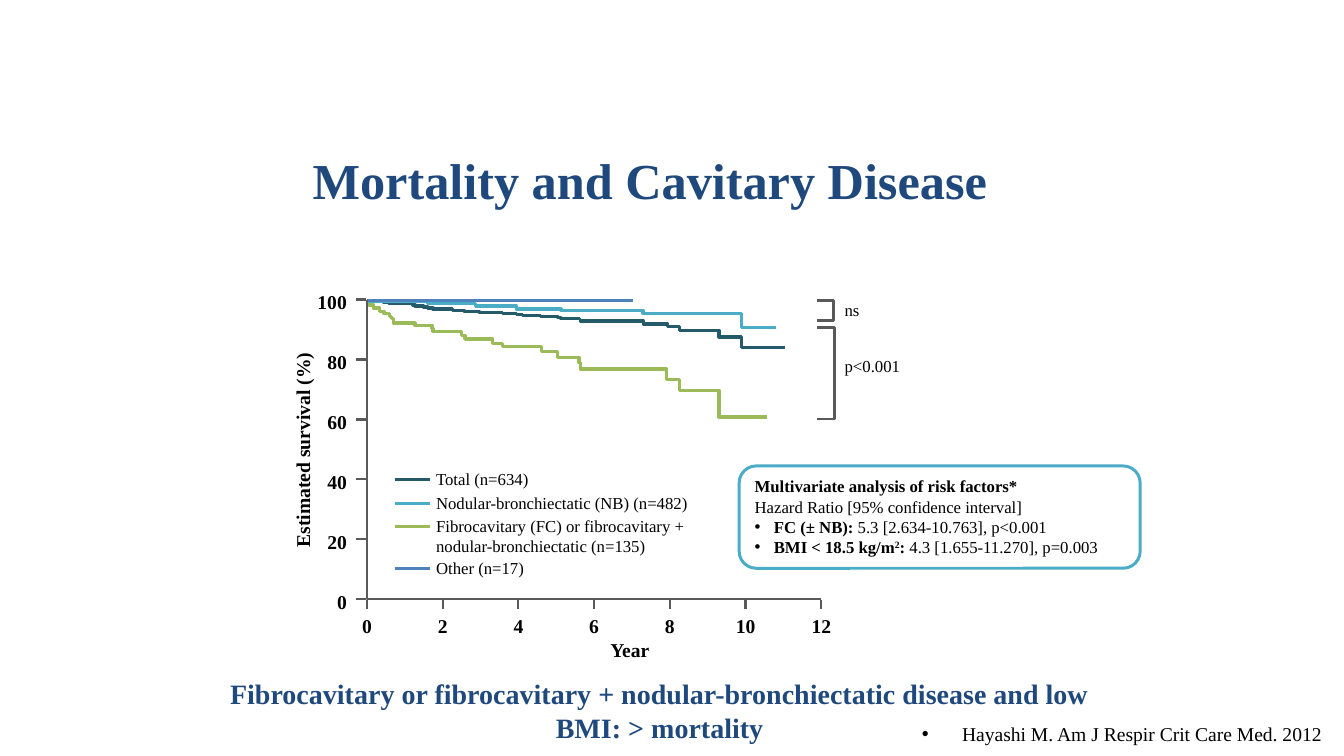
from dataclasses import dataclass

from lxml.etree import SubElement
from pptx import Presentation
from pptx.dml.color import RGBColor
from pptx.enum.shapes import MSO_CONNECTOR, MSO_SHAPE
from pptx.enum.text import MSO_ANCHOR as Anchor, MSO_AUTO_SIZE, PP_ALIGN as Align
from pptx.oxml.ns import qn
from pptx.util import Inches, Pt

FONT = "Times New Roman"
BLACK, WHITE, NAVY = "000000", "FFFFFF", "1F497D"
TEAL, SKY, GREEN, BLUE = "245A69", "4BACC6", "9BBB59", "4F81BD"
AXIS, BRACKET = "5A5A5A", "595959"
X0, Y0, X_STEP, Y_STEP = 3.44, 5.62, 0.71, 0.562

Point = tuple[float, float]


@dataclass
class Curve:
    label: str
    color: str
    legend_top: float
    legend_width: float
    start: Point
    drops: list[Point]  # at x, fall to y
    end_x: float


@dataclass
class Comparison:
    label: str
    label_top: float
    left: float
    top: float
    width: float
    height: float


# Listed from back to front
CURVES = [
    Curve("Fibrocavitary (FC) or fibrocavitary + nodular-bronchiectatic (n=135)",
          GREEN, 4.79, 2.99, (3.46, 2.83),
          [(3.46, 2.86), (3.5, 2.89), (3.56, 2.92), (3.6, 2.94), (3.65, 2.97),
           (3.67, 2.99), (3.69, 3.03), (3.89, 3.05), (4.05, 3.08), (4.06, 3.11),
           (4.33, 3.15), (4.36, 3.18), (4.62, 3.22), (4.71, 3.25), (5.08, 3.3),
           (5.23, 3.35), (5.43, 3.4), (5.44, 3.46), (6.25, 3.56), (6.37, 3.66),
           (6.74, 3.91)], 7.19),
    Curve("Total (n=634)", TEAL, 4.35, 1.17, (3.44, 2.83),
          [(3.6, 2.84), (3.64, 2.85), (3.87, 2.86), (3.89, 2.87), (3.97, 2.88),
           (4.01, 2.89), (4.06, 2.9), (4.24, 2.91), (4.35, 2.92), (4.49, 2.93),
           (4.71, 2.94), (4.84, 2.95), (4.9, 2.96), (5.07, 2.97), (5.23, 2.98),
           (5.26, 2.99), (5.43, 3), (5.44, 3.01), (6.03, 3.04), (6.26, 3.06),
           (6.37, 3.1), (6.74, 3.16), (6.95, 3.26)], 7.36),
    Curve("Nodular-bronchiectatic (NB) (n=482)", SKY, 4.57, 2.83, (3.45, 2.83),
          [(4.01, 2.85), (4.46, 2.87), (4.84, 2.9), (5.26, 2.91), (6.03, 2.94),
           (6.95, 3.07)], 7.28),
    Curve("Other (n=17)", BLUE, 5.18, 1.2, (3.44, 2.82), [], 5.93),
]

COMPARISONS = [
    Comparison("ns", 2.76, 7.66, 2.82, 0.15, 0.19),
    Comparison("p<0.001", 3.29, 7.66, 3.07, 0.16, 0.86),
]

prs = Presentation()
prs.slide_width, prs.slide_height = Inches(12.6), Inches(7.09)
s = prs.slides.add_slide(prs.slide_layouts[1])


def rgb(color: str) -> RGBColor:
    return RGBColor.from_string(color)


def style(font, size: float, color: str = BLACK, bold: bool = False) -> None:
    font.name, font.size, font.bold = FONT, Pt(size), bold
    font.color.rgb = rgb(color)


def place(sp, left: float, top: float, width: float, height: float) -> None:
    sp.left, sp.top = Inches(left), Inches(top)
    sp.width, sp.height = Inches(width), Inches(height)


def write(sp, text: str, size: float, color: str = BLACK, bold: bool = False,
          align: Align = Align.LEFT, anchor: Anchor = Anchor.TOP) -> None:
    tf = sp.text_frame
    tf.text = text
    tf.word_wrap, tf.auto_size = True, MSO_AUTO_SIZE.NONE
    tf.vertical_anchor = anchor
    p = tf.paragraphs[0]
    p.alignment = align
    for r in p.runs:
        style(r.font, size, color, bold)


def add_text(text: str, left: float, top: float, width: float, height: float,
             size: float, bold: bool = False, align: Align = Align.LEFT):
    sp = s.shapes.add_textbox(*map(Inches, (left, top, width, height)))
    write(sp, text, size, bold=bold, align=align)
    return sp


def add_outline(kind: MSO_SHAPE, left: float, top: float, width: float,
                height: float, color: str | None = None):
    sp = s.shapes.add_shape(kind, *map(Inches, (left, top, width, height)))
    sp.shadow.inherit = False
    sp.fill.background()
    if color:
        sp.line.color.rgb, sp.line.width = rgb(color), Pt(2)
    else:
        sp.line.fill.background()
    return sp


def add_line(start: Point, end: Point, color: str, width: float) -> None:
    c = s.shapes.add_connector(MSO_CONNECTOR.STRAIGHT, *map(Inches, start + end))
    c.line.color.rgb, c.line.width = rgb(color), Pt(width)
    SubElement(c._element.spPr, qn("a:effectLst"))


def add_polyline(points: list[Point], color: str, width: float) -> None:
    pts = [(Inches(x), Inches(y)) for x, y in points]
    builder = s.shapes.build_freeform(*pts[0])
    builder.add_line_segments(pts[1:], close=False)
    sp = builder.convert_to_shape()
    sp.shadow.inherit = False
    sp.fill.background()
    sp.line.color.rgb, sp.line.width = rgb(color), Pt(width)


def add_curve(curve: Curve) -> None:
    points = [curve.start]
    for x, y in curve.drops:
        points += [(x, points[-1][1]), (x, y)]
    points.append((curve.end_x, points[-1][1]))
    if curve.drops:
        add_polyline(points, curve.color, 2.25)
    else:
        add_line(points[0], points[-1], curve.color, 2.25)


# Title and citation
title, citation = s.placeholders
place(title, 1.68, 1.67, 8.83, 0.35)
write(title, "Mortality and Cavitary Disease", 34, NAVY, True, Align.CENTER, Anchor.BOTTOM)
place(citation, 3.78, 6.62, 8.71, 0.42)
pPr = citation.text_frame.paragraphs[0]._p.get_or_add_pPr()
pPr.set("marL", "0")
pPr.set("indent", "0")
SubElement(pPr, qn("a:buNone"))
write(citation, "Hayashi M. Am J Respir Crit Care Med. 2012", 13.2,
      align=Align.RIGHT, anchor=Anchor.BOTTOM)
citation.text_frame.paragraphs[0].space_before = Pt(0)

# Conclusion
conclusion = add_outline(MSO_SHAPE.ROUNDED_RECTANGLE, 1.68, 6.25, 9.01, 0.82)
write(conclusion, "Fibrocavitary or fibrocavitary + nodular-bronchiectatic disease and low "
      "BMI: > mortality", 18.9, NAVY, True, Align.CENTER, Anchor.MIDDLE)

# Risk factors
risks = add_outline(MSO_SHAPE.ROUNDED_RECTANGLE, 6.93, 4.37, 3.76, 0.96, SKY)
risks.fill.solid()
risks.fill.fore_color.rgb = rgb(WHITE)
write(risks, "Multivariate analysis of risk factors*\vHazard Ratio [95% confidence interval]",
      11.3, bold=True)
risks.text_frame.paragraphs[0].runs[1].font.bold = False
for factor, square, ratio in [("FC (± NB)", "", " 5.3 [2.634-10.763], p<0.001"),
                              ("BMI < 18.5 kg/m", "2", " 4.3 [1.655-11.270], p=0.003")]:
    p = risks.text_frame.add_paragraph()
    pPr = p._p.get_or_add_pPr()
    pPr.set("marL", str(Inches(0.18)))
    pPr.set("indent", str(-Inches(0.18)))
    SubElement(pPr, qn("a:buFont"), typeface="Arial")
    SubElement(pPr, qn("a:buChar"), char="•")
    p.alignment = Align.LEFT
    for text in filter(None, (factor, square, ":", ratio)):
        r = p.add_run()
        r.text = text
        style(r.font, 11.3, bold=text != ratio)
        if text == square:
            r._r.get_or_add_rPr().set("baseline", "30000")

# Survival curves
for curve in CURVES:
    add_curve(curve)

# Axes with ticks and labels
add_polyline([(X0, 2.81), (X0, Y0), (7.7, Y0)], AXIS, 1.5)
for i in range(7):
    x = X0 + i * X_STEP
    add_line((x, 5.71), (x, 5.63), AXIS, 1.5)
    add_text(str(2 * i), x - 0.32, 5.71, 0.64, 0.32, 13.2, True, Align.CENTER)
for i in range(6):
    y = Y0 - i * Y_STEP
    add_line((3.34, y), (3.43, y), AXIS, 1.5)
    add_text(str(20 * i), 2.77, y - 0.14, 0.58, 0.32, 13.2, True, Align.RIGHT)
add_text("Year", 3.77, 5.93, 4.27, 0.32, 13.2, True, Align.CENTER)
y_title = add_text("Estimated survival (%)", 1.44, 4.06, 2.79, 0.32, 13.2, True, Align.CENTER)
y_title.rotation = 270

# Legend
for curve in CURVES:
    y = curve.legend_top + 0.15
    add_line((3.7, y), (4.03, y), curve.color, 2.25)
    height = 0.48 if curve.color == GREEN else 0.29
    add_text(curve.label, 3.99, curve.legend_top, curve.legend_width, height, 11.3)

# Significance brackets
for c in COMPARISONS:
    bracket = add_outline(MSO_SHAPE.RIGHT_BRACKET, c.left, c.top, c.width, c.height, BRACKET)
    bracket.adjustments[0] = 0
    add_text(c.label, 7.82, c.label_top, 0.79, 0.29, 11.3)

prs.save("out.pptx")
